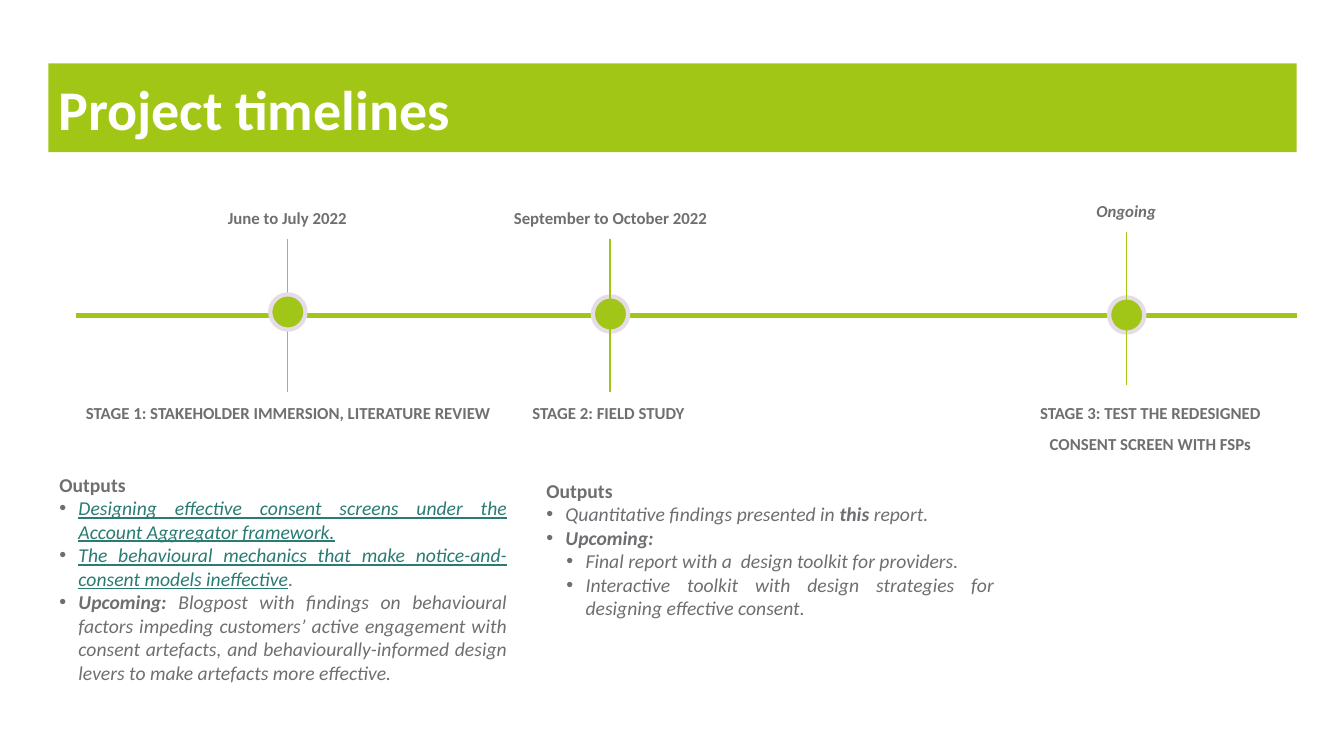
from lxml import etree
from pptx import Presentation
from pptx import util as u
from pptx.dml.color import RGBColor
from pptx.enum import shapes, text
from pptx.oxml import ns

SCALE = 9144  # EMU per px, 100 px to the inch
GREEN, LEAF, RING = "A2C616", "A2C617", "E6DCE8"
GREY, SLATE, TEAL, WHITE = "706F6F", "6D6E71", "2A7B74", "FFFFFF"
BOLD = {"bold": True}
ITALIC = {"italic": True}
STRONG = {"bold": True, "italic": True}
LINK = {"italic": True, "underline": True, "color": TEAL}
LABEL = {"size": u.Pt(12), "bold": True, "color": GREY}
CENTER, JUSTIFY = text.PP_ALIGN.CENTER, text.PP_ALIGN.JUSTIFY


def px(*lengths):
    return [u.Emu(length * SCALE) for length in lengths]


def color(value):
    return RGBColor.from_string(value)


def add_span(para, words, style):
    span = para.add_run()
    span.text = words
    for name, value in {"name": "Calibri", **style}.items():
        if name == "color":
            span.font.color.rgb = color(value)
        else:
            setattr(span.font, name, value)


def set_frame(frame, insets, anchor=text.MSO_ANCHOR.TOP):
    side, edge = px(*insets)
    values = {"margin_left": side, "margin_right": side, "margin_top": edge,
              "margin_bottom": edge, "word_wrap": True, "vertical_anchor": anchor,
              "auto_size": text.MSO_AUTO_SIZE.SHAPE_TO_FIT_TEXT}
    for name, value in values.items():
        setattr(frame, name, value)


def add_label(page, box, words, style, insets=(10, 5), spacing=None):
    frame = page.shapes.add_textbox(*px(*box)).text_frame
    set_frame(frame, insets)
    para = frame.paragraphs[0]
    para.alignment = CENTER
    para.line_spacing = spacing
    add_span(para, words, style)


def add_line(page, start, end, stroke, width):
    line = page.shapes.add_connector(shapes.MSO_CONNECTOR.STRAIGHT, *px(*start, *end))
    line.line.color.rgb = color(stroke)
    line.line.width = u.Pt(width)
    etree.SubElement(line._element.spPr, ns.qn("a:effectLst"))


def add_bullet(para, depth):
    props = para._p.get_or_add_pPr()
    props.set("marL", str(px(19 + 20 * depth)[0]))
    props.set("indent", str(px(-19)[0]))
    tint = etree.SubElement(props, ns.qn("a:buClr"))
    etree.SubElement(tint, ns.qn("a:srgbClr")).set("val", SLATE)
    etree.SubElement(props, ns.qn("a:buFont")).set("typeface", "Arial")
    etree.SubElement(props, ns.qn("a:buChar")).set("char", "•")


def add_title(page, box, words):
    banner = page.shapes.add_shape(shapes.MSO_SHAPE.RECTANGLE, *px(*box))
    banner.shadow.inherit = False
    banner.fill.solid()
    banner.fill.fore_color.rgb = color(GREEN)
    banner.line.fill.background()
    set_frame(banner.text_frame, (10, 10), text.MSO_ANCHOR.MIDDLE)
    para = banner.text_frame.paragraphs[0]
    para.alignment = text.PP_ALIGN.LEFT
    add_span(para, words, {"size": u.Pt(40), "bold": True, "color": WHITE})


def add_dot(page, left, top):
    dot = page.shapes.add_shape(shapes.MSO_SHAPE.OVAL, *px(left, top, 35, 35))
    dot.shadow.inherit = False
    dot.fill.solid()
    dot.fill.fore_color.rgb = color(LEAF)
    dot.line.color.rgb = color(RING)
    dot.line.width = u.Pt(3)


def add_stage(page, box, axis, date, date_width, date_style, dot_drop, name, stem_first=False):
    """Date on top, stem with a dot in the middle, stage name below."""
    left, top, width, height = box
    center = left + axis
    # Date
    add_label(page, (center - date_width // 2, top, date_width, 31), date,
              {**LABEL, **date_style})
    # Stem and dot
    stem = (center, top + 36), (center, top + 188), GREEN, 0.75
    if stem_first:
        add_line(page, *stem)
    add_dot(page, center - 17, top + dot_drop)
    if not stem_first:
        add_line(page, *stem)
    # Stage name, always on the same row
    add_label(page, (left, 383, width, top + height - 383), name, LABEL, (13, 7), 1.5)


def add_outputs(page, box, tone, items):
    """Heading and bullets; each item is a depth and its spans."""
    frame = page.shapes.add_textbox(*px(*box)).text_frame
    set_frame(frame, (10, 5))
    heading = frame.paragraphs[0]
    heading.alignment = JUSTIFY
    base = {"size": u.Pt(14), "color": tone}
    add_span(heading, "Outputs", {**base, **BOLD})
    for depth, spans in items:
        para = frame.add_paragraph()
        para.alignment = JUSTIFY
        para.level = 4 * depth
        add_bullet(para, depth)
        for words, style in spans:
            add_span(para, words, {**base, **style})


def main():
    deck = Presentation()
    deck.slide_width, deck.slide_height = px(1333, 750)
    page = deck.slides.add_slide(deck.slide_layouts[6])

    # Title and time axis
    add_title(page, (48, 63, 1238, 88), "Project timelines")
    add_line(page, (75, 313), (1286, 313), LEAF, 3)

    # Stages
    add_stage(page, (60, 201, 452, 226), 225, "June to July 2022", 146, {}, 91,
              "STAGE 1: STAKEHOLDER IMMERSION, LITERATURE REVIEW", stem_first=True)
    add_stage(page, (476, 201, 259, 226), 129, "September to October 2022", 223, {}, 93,
              "STAGE 2: FIELD STUDY ")
    add_stage(page, (987, 194, 308, 263), 130, "Ongoing", 146, ITALIC, 101,
              "STAGE 3: TEST THE REDESIGNED CONSENT SCREEN WITH FSPs")

    # Outputs
    add_outputs(page, (49, 464, 464, 223), GREY, [
        (0, [("Designing effective consent screens under the Account Aggregator framework.", LINK)]),
        (0, [("The behavioural mechanics that make notice-and-consent models ineffective", LINK),
             (".", ITALIC)]),
        (0, [("Upcoming: ", STRONG),
             ("Blogpost with findings on behavioural factors impeding customers’ active "
              "engagement with consent artefacts, and behaviourally-informed design levers "
              "to make artefacts more effective.", ITALIC)]),
    ])
    add_outputs(page, (532, 470, 464, 152), SLATE, [
        (0, [("Quantitative findings presented in ", ITALIC), ("this", STRONG),
             (" report.", ITALIC)]),
        (0, [("Upcoming: ", STRONG)]),
        (1, [("Final report with a  design toolkit for providers.", ITALIC)]),
        (1, [("Interactive toolkit with design strategies for designing effective consent.",
              ITALIC)]),
    ])
    deck.save("out.pptx")


if __name__ == "__main__":
    main()
